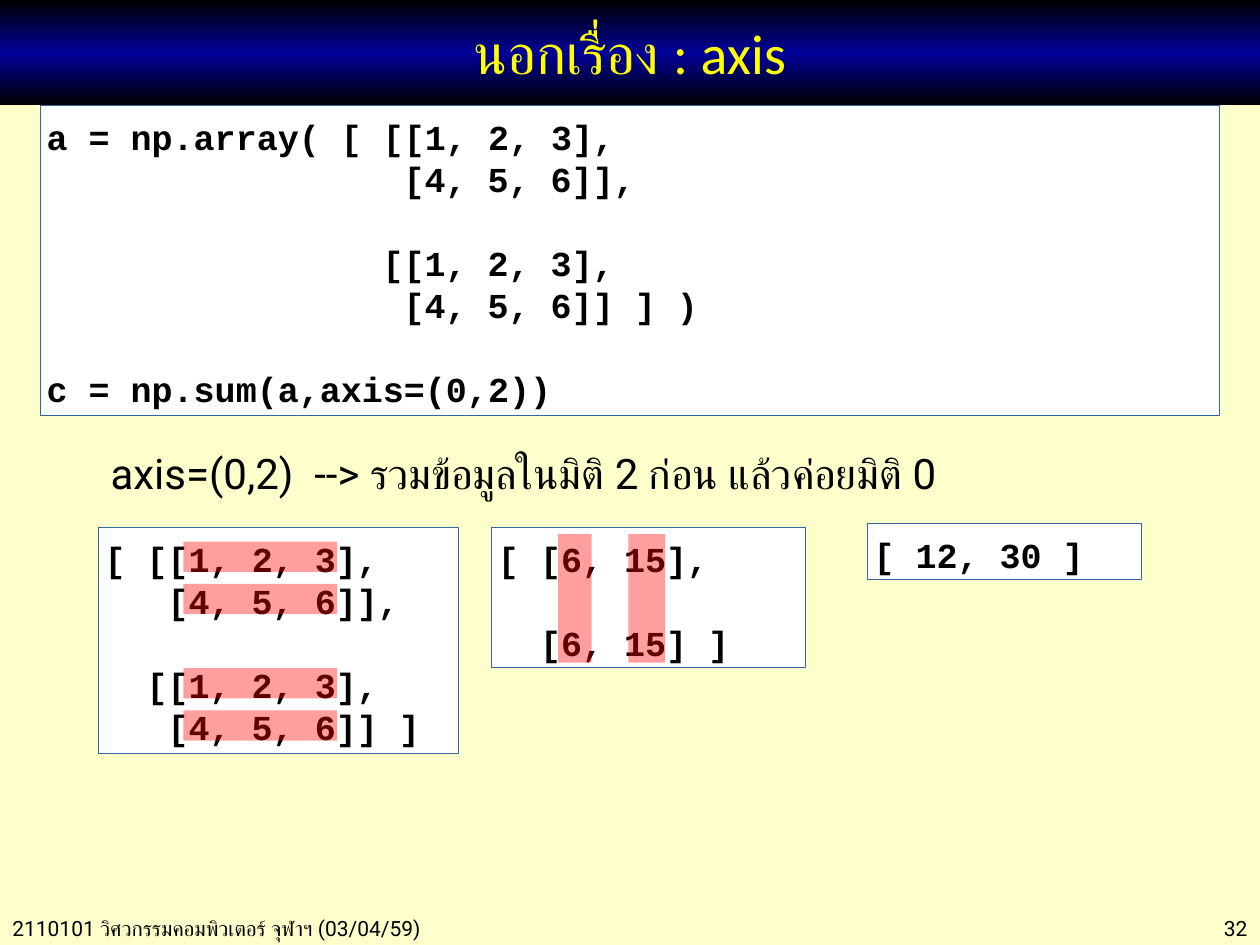
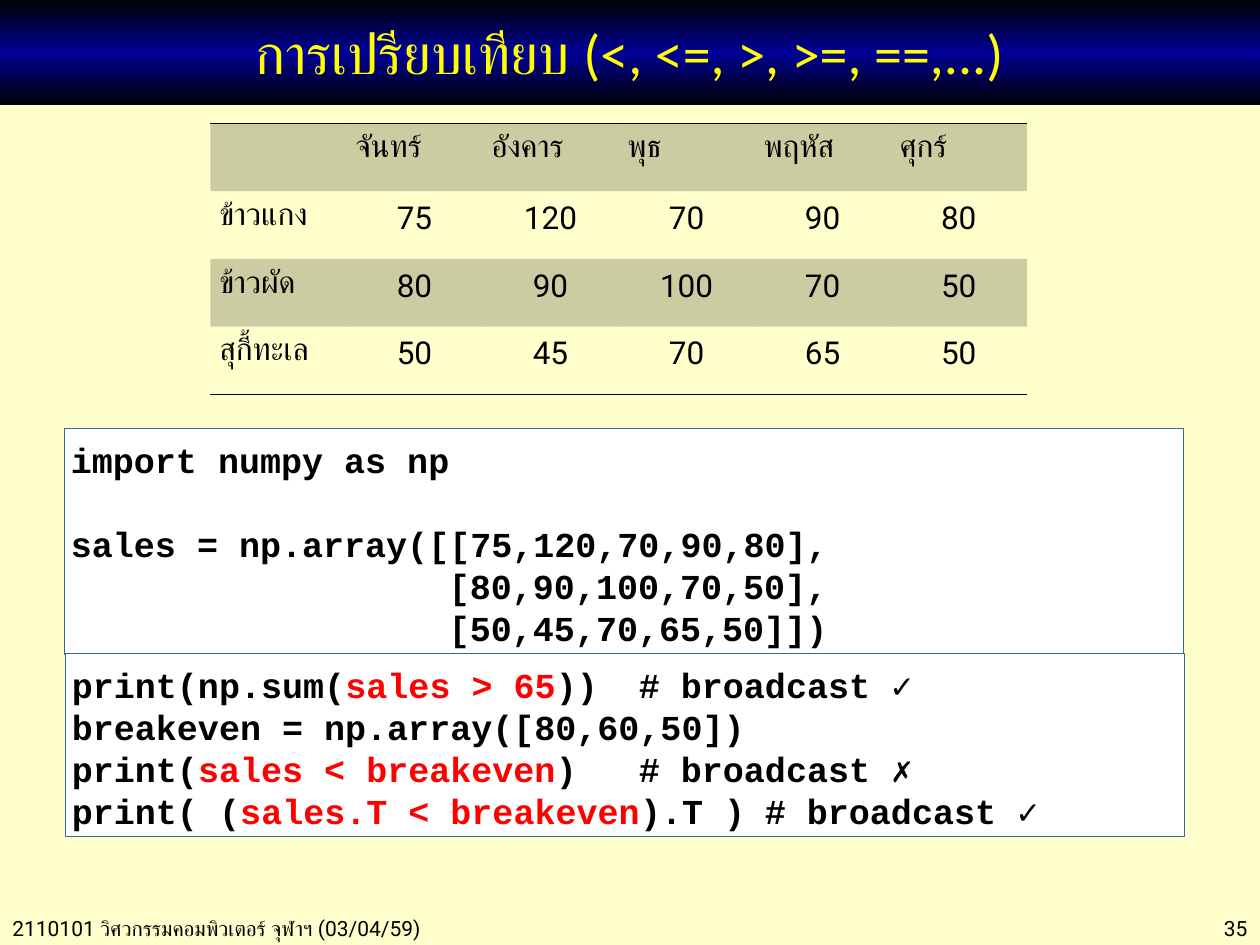
from copy import deepcopy

from lxml.etree import SubElement
from pptx import Presentation
from pptx.dml.color import RGBColor
from pptx.enum.shapes import MSO_SHAPE
from pptx.enum.text import MSO_ANCHOR, PP_ALIGN
from pptx.oxml.ns import qn
from pptx.util import Cm, Pt

# Shared look
COLORS = {
    "page": "FFFFCC", "black": "000000", "band": "000099", "title": "FFFF00",
    "paper": "FFFFFF", "outline": "3465A4", "red": "FF0000",
}
BODY_FONT, TITLE_FONT, CODE_FONT = "Roboto", "Calibri", "Courier New"
FOOTER = "2110101 วิศวกรรมคอมพิวเตอร์ จุฬาฯ (03/04/59)"
CODE_SIZE, CODE_LINE, CODE_CHARACTER = 20, 24, 12  # points
COMMENT_COLUMN = 36
NO_STYLE = "{2D5ABB26-0587-4C30-8999-92F81FD0307C}"

# Content of the axis slide: boxes are (left, top, width, height) in cm
AXIS_TITLE = "นอกเรื่อง : axis"
AXIS_NOTE = "axis=(0,2)  --> รวมข้อมูลในมิติ 2 ก่อน แล้วค่อยมิติ 0"
AXIS_CODE = [
    ((0.81, 2.13, 23.77, 6.25), """\
a = np.array( [ [[1, 2, 3],
                 [4, 5, 6]],

                [[1, 2, 3],
                 [4, 5, 6]] ] )

c = np.sum(a,axis=(0,2))"""),
    ((1.98, 10.64, 7.26, 4.55), """\
[ [[1, 2, 3],
   [4, 5, 6]],

  [[1, 2, 3],
   [4, 5, 6]] ]"""),
    ((9.91, 10.64, 6.32, 2.82), """\
[ [6, 15],

  [6, 15] ]"""),
    ((17.48, 10.56, 5.54, 1.12), "[ 12, 30 ]"),
]
SUMMED_LINES = [0, 1, 3, 4]
SUMMED_COLUMNS = [(11.25, 0.68), (12.67, 0.74)]

# Content of the comparison slide: text between bars is red
COMPARE_TITLE = "การเปรียบเทียบ (<, <=, >, >=, ==,...)"
SALES = [
    ["", "จันทร์", "อังคาร", "พุธ", "พฤหัส", "ศุกร์"],
    ["ข้าวแกง", "75", "120", "70", "90", "80"],
    ["ข้าวผัด", "80", "90", "100", "70", "50"],
    ["สุกี้ทะเล", "50", "45", "70", "65", "50"],
]
COMPARE_CODE = [
    ((1.3, 8.64, 22.56, 4.55), """\
import numpy as np

sales = np.array([[75,120,70,90,80],
                  [80,90,100,70,50],
                  [50,45,70,65,50]])"""),
    ((1.32, 13.18, 22.56, 3.68), """\
print(np.sum(|sales > 65|))\t# broadcast ✓
breakeven = np.array([80,60,50])
print(|sales < breakeven|)\t# broadcast ✗
print( (|sales.T < breakeven|).T )\t# broadcast ✓"""),
]


def rgb(name):
    return RGBColor.from_string(COLORS[name])


def add_run(paragraph, text, font, size, color="black", bold=False):
    run = paragraph.add_run()
    run.text = text
    run.font.name, run.font.size, run.font.bold = font, Pt(size), bold
    run.font.color.rgb = rgb(color)


def set_alpha(properties, percent):
    color = properties.find(qn("a:solidFill"))[0]
    SubElement(color, qn("a:alpha"), val=str(percent * 1000))


def add_rectangle(slide, box, fill=None):
    shape = slide.shapes.add_shape(MSO_SHAPE.RECTANGLE, *map(Cm, box))
    shape.shadow.inherit = False
    shape.line.fill.background()
    if fill:
        shape.fill.solid()
        shape.fill.fore_color.rgb = rgb(fill)
    return shape


def add_label(slide, box, text, size, alignment=PP_ALIGN.LEFT, wrap=True):
    frame = slide.shapes.add_textbox(*map(Cm, box)).text_frame
    frame.word_wrap = wrap
    frame.paragraphs[0].alignment = alignment
    add_run(frame.paragraphs[0], text, BODY_FONT, size)


def add_highlight(slide, box):
    set_alpha(add_rectangle(slide, box, "red")._element.spPr, 38)


def add_title(slide, title):
    band = add_rectangle(slide, (0, 0, 25.4, 2.12))
    band.fill.gradient()
    band.fill.gradient_angle = 90
    stop_list = band._element.spPr.find(qn("a:gradFill")).find(qn("a:gsLst"))
    stop_list.insert(1, deepcopy(stop_list[0]))
    for stop, position, color in zip(band.fill.gradient_stops, (0, 0.5, 1),
                                     ("black", "band", "black")):
        stop.position = position
        stop.color.rgb = rgb(color)
    frame = band.text_frame
    frame.vertical_anchor = MSO_ANCHOR.MIDDLE
    frame.paragraphs[0].alignment = PP_ALIGN.CENTER
    add_run(frame.paragraphs[0], title, TITLE_FONT, 32, "title")


def add_slide(presentation, title, number):
    slide = presentation.slides.add_slide(presentation.slide_layouts[6])
    slide.background.fill.solid()
    slide.background.fill.fore_color.rgb = rgb("page")
    add_title(slide, title)
    add_label(slide, (0, 18.34, 9.9, 0.76), FOOTER, 12)
    add_label(slide, (21.9, 18.34, 3.5, 0.76), number, 12, PP_ALIGN.RIGHT)
    return slide


def add_code(slide, box, code):
    """Leading blanks become indents and empty lines become spacing."""
    shape = add_rectangle(slide, box, "paper")
    shape.line.color.rgb = rgb("outline")
    shape.line.width = Pt(0.5)
    frame = shape.text_frame
    frame.vertical_anchor = MSO_ANCHOR.TOP
    frame.margin_left = frame.margin_right = frame.margin_bottom = Cm(0.13)
    frame.margin_top = Cm(0.2)
    paragraph, skipped = None, 0
    for line in code.split("\n"):
        text = line.lstrip()
        if not text:
            skipped += 1
            continue
        paragraph = frame.add_paragraph() if paragraph else frame.paragraphs[0]
        paragraph.alignment = PP_ALIGN.LEFT
        paragraph.line_spacing = Pt(CODE_LINE)
        paragraph.space_before = Pt(CODE_LINE * skipped)
        skipped = 0
        properties = paragraph._p.get_or_add_pPr()
        indent = Pt(CODE_CHARACTER * (len(line) - len(text)))
        properties.set("marL", str(indent))
        properties.set("indent", "0")
        if "\t" in text:
            tabs = SubElement(properties, qn("a:tabLst"))
            position = Pt(CODE_CHARACTER * COMMENT_COLUMN)
            SubElement(tabs, qn("a:tab"), pos=str(position), algn="l")
        for index, part in enumerate(text.split("|")):
            color = "red" if index % 2 else "black"
            add_run(paragraph, part, CODE_FONT, CODE_SIZE, color, True)


def add_border(cell, side):
    line = SubElement(cell._tc.get_or_add_tcPr(), qn("a:" + side), w=str(Pt(1)))
    fill = SubElement(line, qn("a:solidFill"))
    SubElement(fill, qn("a:srgbClr"), val=COLORS["black"])


def add_sales_table(slide):
    rows, columns = len(SALES), len(SALES[0])
    table = slide.shapes.add_table(rows, columns, Cm(4.24), Cm(2.49),
                                   Cm(16.46), Cm(5.46)).table
    table.first_row = table.horz_banding = False
    table._tbl.tblPr.find(qn("a:tableStyleId")).text = NO_STYLE
    for row, values in enumerate(SALES):
        for column, value in enumerate(values):
            cell = table.cell(row, column)
            cell.margin_left = cell.margin_right = Cm(0.18)
            cell.margin_top = cell.margin_bottom = Cm(0.18)
            if row == 0:
                add_border(cell, "lnT")
            if row == rows - 1:
                add_border(cell, "lnB")
            if row % 2:
                cell.fill.background()
            else:
                cell.fill.solid()
                cell.fill.fore_color.rgb = rgb("black")
                set_alpha(cell._tc.tcPr, 20)
            if value:
                paragraph = cell.text_frame.paragraphs[0]
                if row and column:
                    paragraph.alignment = PP_ALIGN.CENTER
                add_run(paragraph, value, BODY_FONT, 18)


def build_axis_slide(presentation):
    slide = add_slide(presentation, AXIS_TITLE, "32")
    for box, code in AXIS_CODE:
        add_code(slide, box, code)
    add_label(slide, (1.98, 8.89, 19.33, 2.31), AXIS_NOTE, 24, wrap=False)
    for line in SUMMED_LINES:
        add_highlight(slide, (3.7, 10.92 + 0.85 * line, 3.1, 0.61))
    for left, width in SUMMED_COLUMNS:
        add_highlight(slide, (left, 10.77, width, 2.59))


def build_compare_slide(presentation):
    slide = add_slide(presentation, COMPARE_TITLE, "35")
    add_sales_table(slide)
    for box, code in COMPARE_CODE:
        add_code(slide, box, code)


def main():
    presentation = Presentation()
    presentation.slide_width, presentation.slide_height = Cm(25.4), Cm(19.05)
    build_axis_slide(presentation)
    build_compare_slide(presentation)
    presentation.save("out.pptx")


if __name__ == "__main__":
    main()
